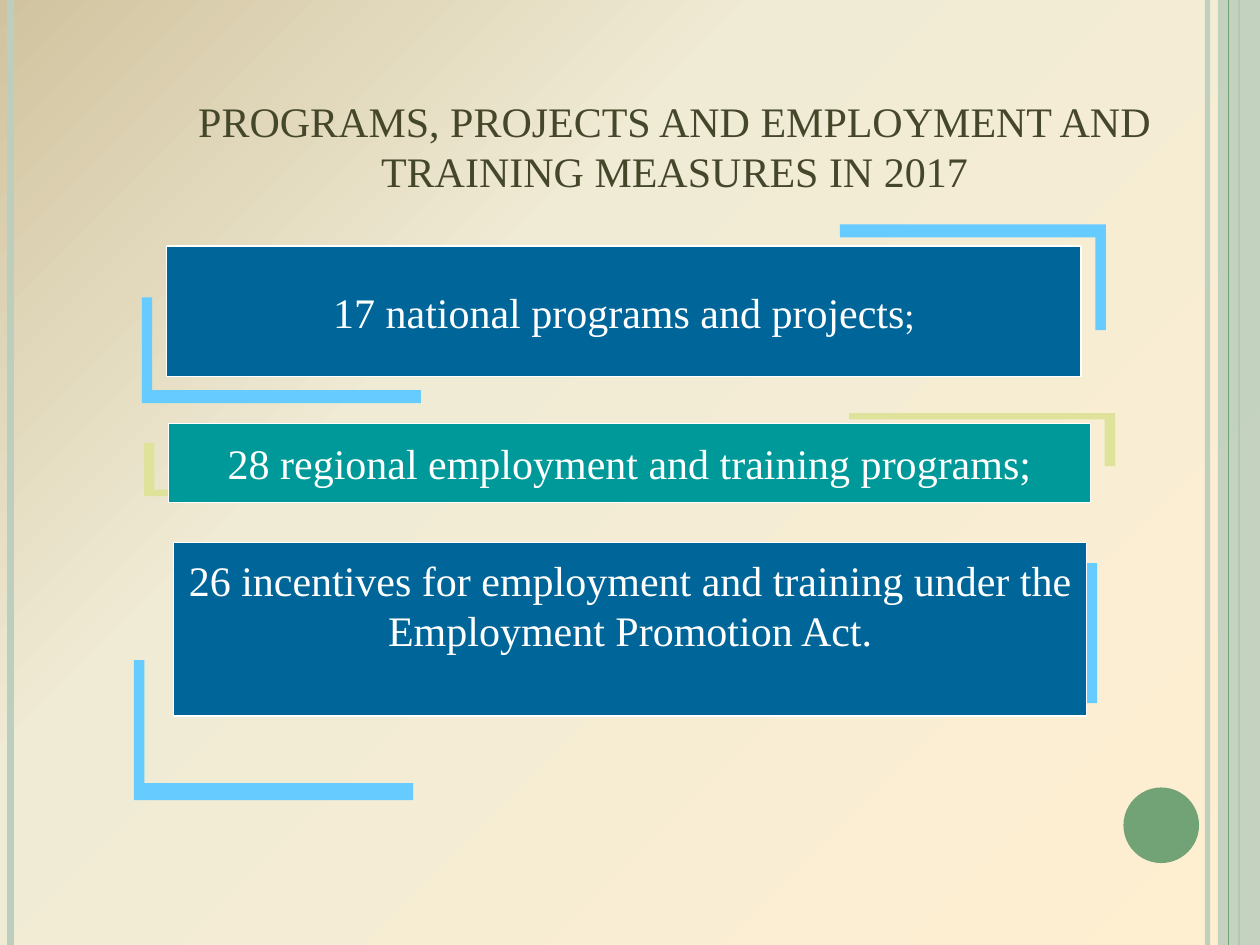
from lxml.etree import SubElement
from pptx import Presentation
from pptx.dml.color import RGBColor
from pptx.enum.shapes import MSO_CONNECTOR, MSO_SHAPE
from pptx.enum.text import MSO_ANCHOR, PP_ALIGN
from pptx.oxml import parse_xml
from pptx.oxml.ns import nsdecls, qn
from pptx.util import Pt

SERIF = "Times New Roman"
SAGE, GREEN, SKY, LIME = "BCCEBD", "72A376", "66CCFF", "DFE29A"
BLUE, TEAL, WHITE, OLIVE = "006699", "009999", "FFFFFF", "45472B"


def rgb(value):
    return RGBColor.from_string(value)


class Deck:
    text_format = {"name": SERIF, "size": Pt(24)}
    frame_format = {"word_wrap": True, "vertical_anchor": MSO_ANCHOR.MIDDLE}

    def __init__(self, width, height):
        self.prs = Presentation()
        self.prs.slide_width, self.prs.slide_height = Pt(width), Pt(height)
        self.s = self.prs.slides.add_slide(self.prs.slide_layouts[6])

    def background(self, stops):
        fill = self.s.background.fill
        fill.gradient()
        grad = self.s.background._cSld.find(".//" + qn("a:gradFill"))
        for child in list(grad):
            grad.remove(child)
        gs = "".join(
            f'<a:gs pos="{pos * 1000}"><a:srgbClr val="{color}"/></a:gs>'
            for pos, color in stops
        )
        grad.append(parse_xml(f'<a:gsLst {nsdecls("a")}>{gs}</a:gsLst>'))
        grad.append(parse_xml(
            f'<a:path {nsdecls("a")} path="circle">'
            '<a:fillToRect l="100000" t="100000"/></a:path>'
        ))

    def opacity(self, element, percent):
        color = element.find(".//" + qn("a:srgbClr"))
        SubElement(color, qn("a:alpha"), val=str(percent * 1000))

    def paint(self, sp, fill, line=None):
        sp.shadow.inherit = False
        sp.fill.solid()
        sp.fill.fore_color.rgb = rgb(fill)
        if line:
            sp.line.color.rgb = rgb(line)
            sp.line.width = Pt(0.75)
        else:
            sp.line.fill.background()
        return sp

    def shape(self, kind, x, y, w, h, fill, line=None):
        sp = self.s.shapes.add_shape(kind, Pt(x), Pt(y), Pt(w), Pt(h))
        return self.paint(sp, fill, line)

    def rule(self, x, color, width, alpha=100):
        c = self.s.shapes.add_connector(
            MSO_CONNECTOR.STRAIGHT, Pt(x), 0, Pt(x), self.prs.slide_height)
        c.line.color.rgb = rgb(color)
        c.line.width = Pt(width)
        if alpha < 100:
            self.opacity(c.line._get_or_add_ln(), alpha)
        SubElement(c._element.spPr, qn("a:effectLst"))

    def bracket(self, x, y, w, h, thick_x, thick_y, color):
        offsets = [(w, 0), (w, thick_y), (thick_x, thick_y), (thick_x, h), (0, h)]
        fb = self.s.shapes.build_freeform(Pt(x), Pt(y))
        fb.add_line_segments([(Pt(x + dx), Pt(y + dy)) for dx, dy in offsets])
        self.paint(fb.convert_to_shape(), color)

    def text(self, sp, runs, color, **frame):
        tf = sp.text_frame
        for key, value in {**self.frame_format, **frame}.items():
            setattr(tf, key, value)
        p = tf.paragraphs[0]
        p.alignment = PP_ALIGN.CENTER
        for content, changes in runs:
            r = p.add_run()
            r.text = content
            r.font.color.rgb = rgb(color)
            for key, value in {**self.text_format, **changes}.items():
                setattr(r.font, key, value)

    def title(self, x, y, w, h, content):
        sp = self.s.shapes.add_textbox(Pt(x), Pt(y), Pt(w), Pt(h))
        self.text(sp, [(content, {})], OLIVE, vertical_anchor=MSO_ANCHOR.TOP)

    def box(self, x, y, w, h, fill, runs, **frame):
        sp = self.shape(MSO_SHAPE.RECTANGLE, x, y, w, h, fill, WHITE)
        self.text(sp, runs, WHITE, **frame)


def main():
    deck = Deck(720, 540)
    deck.background([(0, "FFEFD1"), (65, "F0EBD5"), (100, "D1C39F")])

    deck.rule(690, SAGE, 3, 93)
    deck.rule(6, SAGE, 4.5)
    deck.rule(708, GREEN, 1.5)
    band = deck.shape(MSO_SHAPE.RECTANGLE, 696, 0, 24, 540, SAGE)
    deck.opacity(band._element.spPr, 87)
    deck.rule(702, GREEN, 0.75)
    deck.shape(MSO_SHAPE.OVAL, 642, 450, 43.2, 43.2, GREEN)

    deck.title(99.2, 51, 572.4, 65.5,
               "PROGRAMS, PROJECTS AND EMPLOYMENT AND TRAINING MEASURES IN 2017")

    items = [
        ((81, 230.4), (632, 128.2), 60.5, 7.4, SKY,
         (95.2, 140.5, 522.5, 74.7), BLUE,
         [("17 national programs and projects", {}),
          (";", {"name": "TeX Gyre Schola", "size": Pt(20)})], {}),
        ((82.3, 283.5), (637.3, 236), 30.3, 3.7, LIME,
         (96.5, 242, 526.5, 45), TEAL,
         [("28 regional employment and training programs;", {})], {}),
        ((76.5, 457.2), (627, 321.8), 80, 9.6, SKY,
         (99.3, 310, 521.7, 99.2), BLUE,
         [("26 incentives for employment and training under the "
           "Employment Promotion Act.", {})], {"margin_bottom": Pt(31.6)}),
    ]
    for low, high, arm, thick, accent, bounds, fill, runs, frame in items:
        deck.bracket(*low, 159.5, -arm, 6, -thick, accent)
        deck.bracket(*high, -152, arm, -6, thick, accent)
        deck.box(*bounds, fill, runs, **frame)

    deck.prs.save("out.pptx")


if __name__ == "__main__":
    main()
